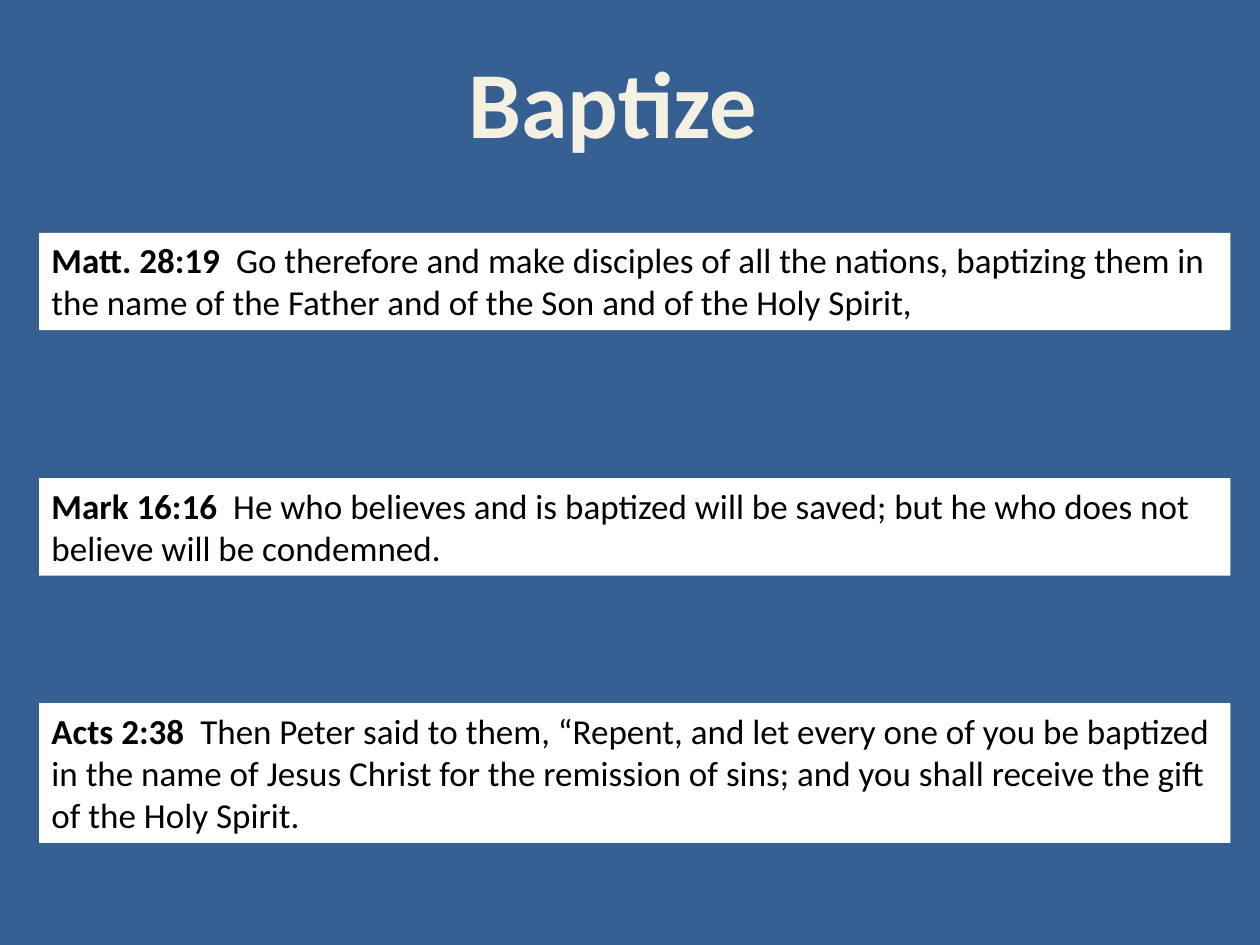
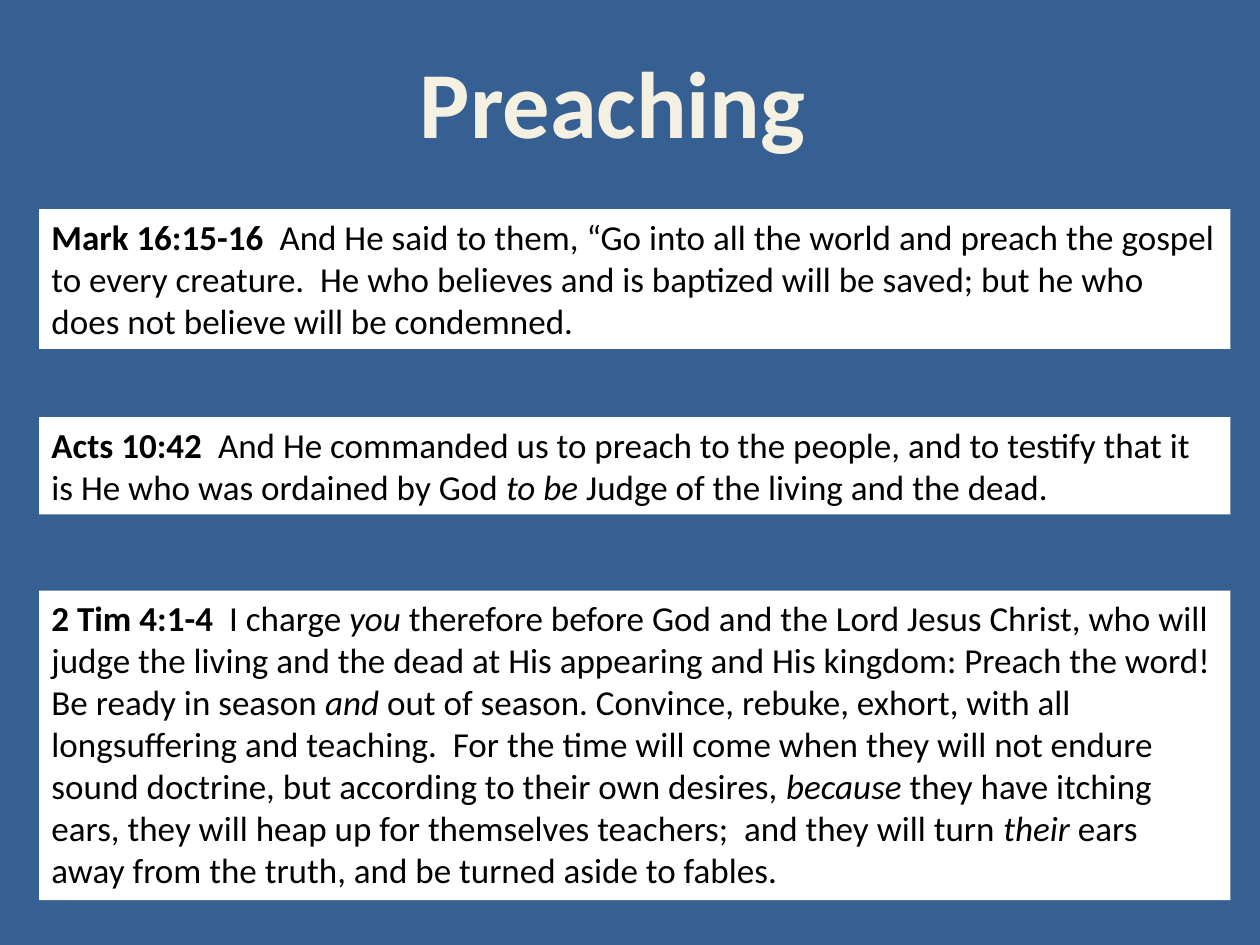
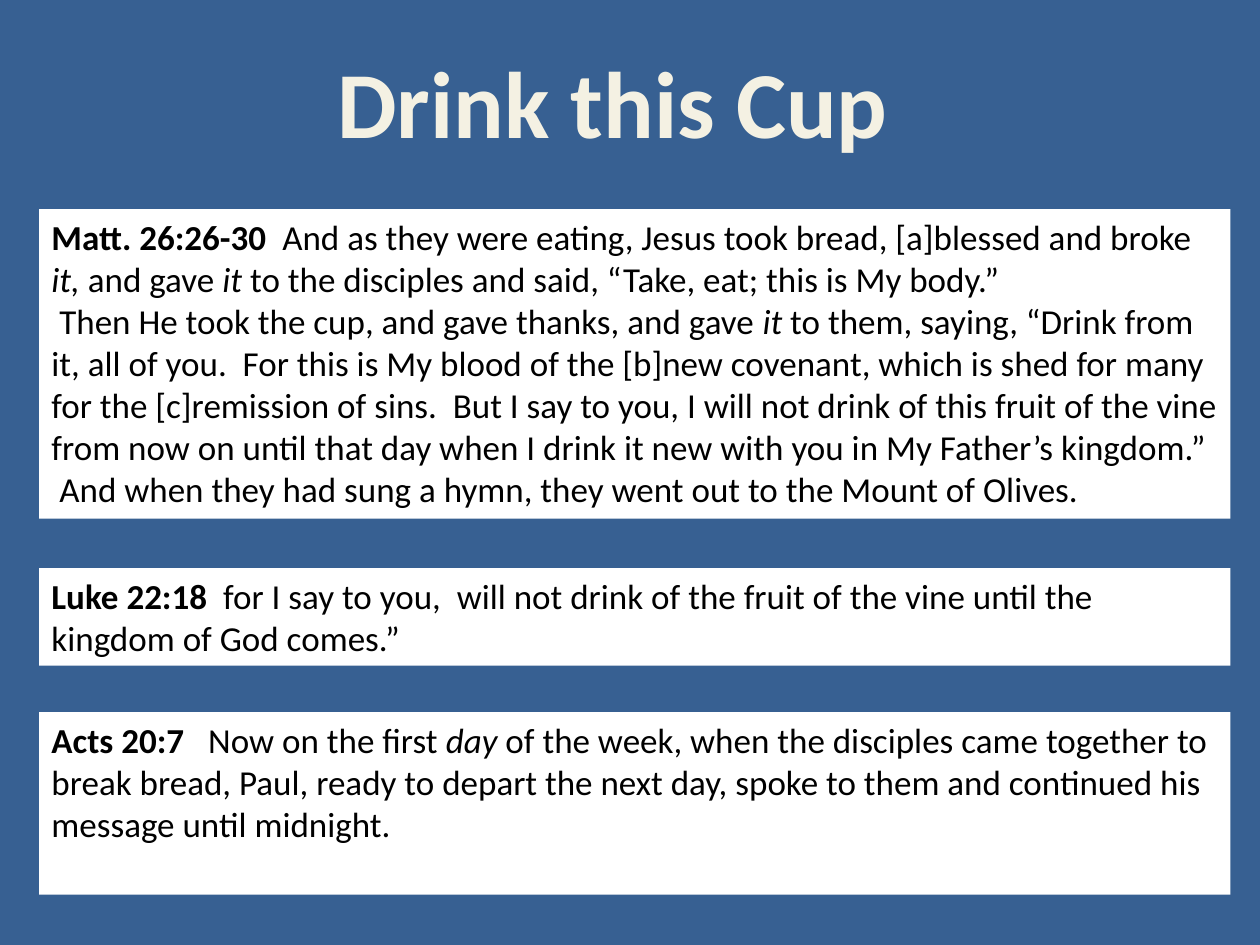
from lxml.etree import SubElement
from pptx import Presentation
from pptx.dml.color import RGBColor
from pptx.enum.shapes import MSO_SHAPE
from pptx.enum.text import MSO_ANCHOR, MSO_AUTO_SIZE, PP_ALIGN
from pptx.oxml.ns import qn
from pptx.util import Pt

# Each verse: top, number of lines, reference, paragraphs (*...* is italic)
SLIDES = [
    {"title": "Baptize", "title_width": 183, "verses": [
        (133, 2, "Matt. 28:19", [
            "Go therefore and make disciples of all the nations, baptizing them in the name of "
            "the Father and of the Son and of the Holy Spirit,"]),
        (273.2, 2, "Mark 16:16", [
            "He who believes and is baptized will be saved; but he who does not believe will be "
            "condemned."]),
        (401.8, 3, "Acts 2:38", [
            "Then Peter said to them, “Repent, and let every one of you be baptized in the name "
            "of Jesus Christ for the remission of sins; and you shall receive the gift of the "
            "Holy Spirit."]),
    ]},
    {"title": "Preaching", "title_width": 238, "verses": [
        (119.5, 3, "Mark 16:15-16", [
            "And He said to them, “Go into all the world and preach the gospel to every "
            "creature.  He who believes and is baptized will be saved; but he who does not "
            "believe will be condemned."]),
        (238.3, 2, "Acts 10:42", [
            "And He commanded us to preach to the people, and to testify that it is He who was "
            "ordained by God *to be* Judge of the living and the dead."]),
        (337.5, 7, "2 Tim 4:1-4", [
            "I charge *you* therefore before God and the Lord Jesus Christ, who will judge the "
            "living and the dead at His appearing and His kingdom: Preach the word! Be ready in "
            "season *and* out of season. Convince, rebuke, exhort, with all longsuffering and "
            "teaching.  For the time will come when they will not endure sound doctrine, but "
            "according to their own desires, *because* they have itching ears, they will heap "
            "up for themselves teachers;  and they will turn *their* ears away from the truth, "
            "and be turned aside to fables."]),
    ]},
    {"title": "Drink this Cup", "title_width": 333, "verses": [
        (119.5, 7, "Matt. 26:26-30", [
            "And as they were eating, Jesus took bread, [a]blessed and broke *it,* and gave "
            "*it* to the disciples and said, “Take, eat; this is My body.”",
            " Then He took the cup, and gave thanks, and gave *it* to them, saying, “Drink from "
            "it, all of you.  For this is My blood of the [b]new covenant, which is shed for "
            "many for the [c]remission of sins.  But I say to you, I will not drink of this "
            "fruit of the vine from now on until that day when I drink it new with you in My "
            "Father’s kingdom.”",
            " And when they had sung a hymn, they went out to the Mount of Olives."]),
        (324.7, 2, "Luke 22:18", [
            "for I say to you,  will not drink of the fruit of the vine until the kingdom of "
            "God comes.”"]),
        (407, 4, "Acts 20:7", [
            " Now on the first *day* of the week, when the disciples came together to break "
            "bread, Paul, ready to depart the next day, spoke to them and continued his message "
            "until midnight."]),
    ]},
]

BACKGROUND, PANEL, TITLE_OUTLINE = "376092", "FFFFFF", "054697"
TITLE_STYLE = {"name": "Calibri", "size": Pt(54), "bold": True, "color": "F4F1E3"}
VERSE_STYLE = {"name": "Calibri", "size": Pt(20), "bold": False, "color": "000000"}
TITLE_CENTER, TITLE_TOP, TITLE_HEIGHT = 350.2, 21.6, 72.7
VERSE_LEFT, VERSE_WIDTH = 22.3, 680.75
LINE_HEIGHT, VERSE_PADDING = 24.25, 7.2


def rgb(color):
    return RGBColor.from_string(color)


def add_run(paragraph, text, style):
    run = paragraph.add_run()
    run.text = text
    for name, value in style.items():
        if name == "color":
            run.font.color.rgb = rgb(value)
        else:
            setattr(run.font, name, value)
    return run


def outline_text(run, color):
    properties = run.font._element
    line = SubElement(properties, qn("a:ln"), w=str(Pt(1)))
    SubElement(SubElement(line, qn("a:solidFill")), qn("a:srgbClr"), val=color)
    properties.insert(0, line)


def add_title(slide, text, width):
    box = slide.shapes.add_textbox(
        Pt(TITLE_CENTER - width / 2), Pt(TITLE_TOP), Pt(width), Pt(TITLE_HEIGHT))
    box.text_frame.word_wrap = False
    paragraph = box.text_frame.paragraphs[0]
    paragraph.alignment = PP_ALIGN.CENTER
    outline_text(add_run(paragraph, text, TITLE_STYLE), TITLE_OUTLINE)


def add_verse(slide, top, lines, reference, paragraphs):
    panel = slide.shapes.add_shape(
        MSO_SHAPE.RECTANGLE, Pt(VERSE_LEFT), Pt(top),
        Pt(VERSE_WIDTH), Pt(lines * LINE_HEIGHT + VERSE_PADDING))
    panel.shadow.inherit = False
    panel.fill.solid()
    panel.fill.fore_color.rgb = rgb(PANEL)
    panel.line.fill.background()
    frame = panel.text_frame
    frame_format = {"word_wrap": True, "auto_size": MSO_AUTO_SIZE.NONE,
                    "vertical_anchor": MSO_ANCHOR.TOP}
    for name, value in frame_format.items():
        setattr(frame, name, value)
    for index, text in enumerate(paragraphs):
        paragraph = frame.add_paragraph() if index else frame.paragraphs[0]
        paragraph.alignment = PP_ALIGN.LEFT
        if index == 0:
            add_run(paragraph, reference + "  ", {**VERSE_STYLE, "bold": True})
        for part, piece in enumerate(text.split("*")):
            add_run(paragraph, piece, {**VERSE_STYLE, "italic": part % 2 == 1})


def main():
    presentation = Presentation()
    presentation.slide_width, presentation.slide_height = Pt(720), Pt(540)
    for content in SLIDES:
        slide = presentation.slides.add_slide(presentation.slide_layouts[6])
        slide.background.fill.solid()
        slide.background.fill.fore_color.rgb = rgb(BACKGROUND)
        add_title(slide, content["title"], content["title_width"])
        for verse in content["verses"]:
            add_verse(slide, *verse)
    presentation.save("out.pptx")


if __name__ == "__main__":
    main()
